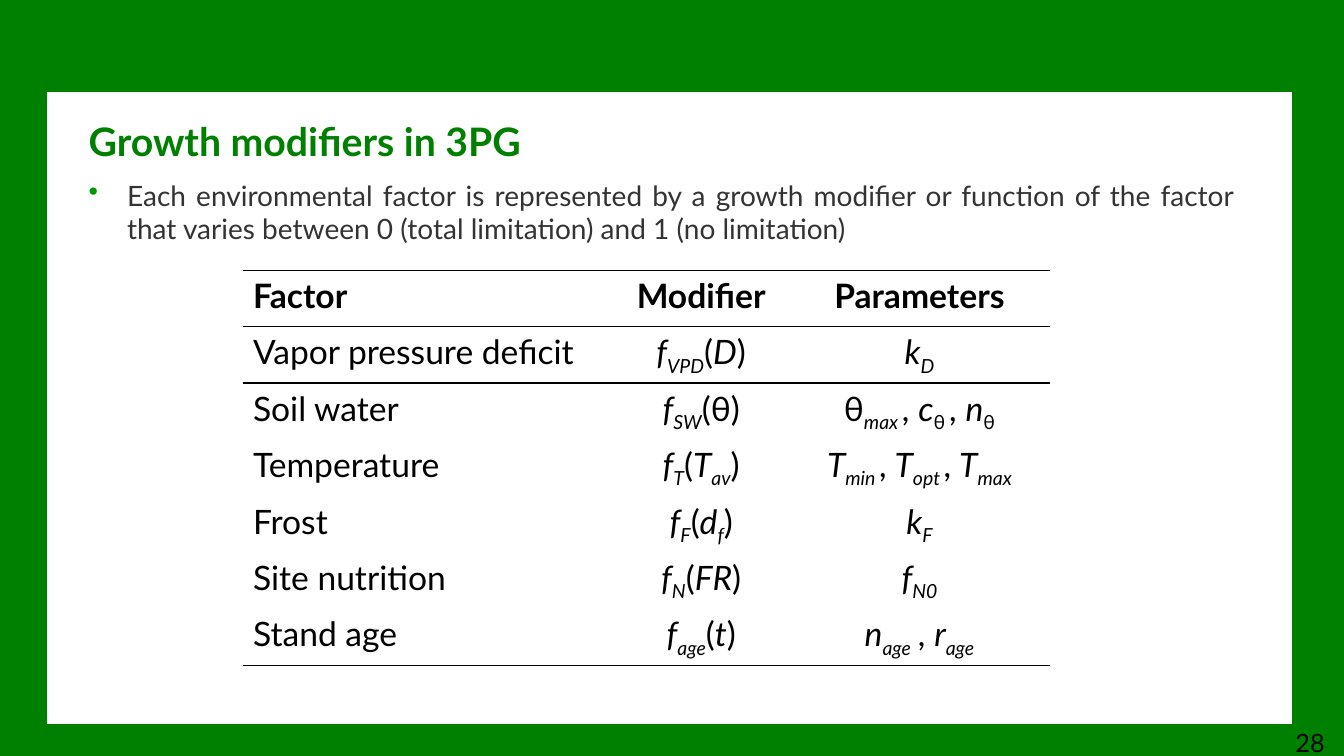
from pptx import Presentation
from pptx.dml.color import RGBColor
from pptx.enum.shapes import MSO_SHAPE
from pptx.enum.text import PP_ALIGN
from pptx.oxml import parse_xml
from pptx.oxml.ns import nsdecls
from pptx.util import Inches, Pt

COLORS = {
    "green": "008000",
    "bullet": "009900",
    "white": "FFFFFF",
    "body": "333333",
    "black": "000000",
}
FONT = "Lato"
NO_GRID_STYLE = "{2D5ABB26-0587-4C30-8999-92F81FD0307C}"
COLUMN_WIDTHS = [3.67, 1.75, 2.58]
ROW_HEIGHT = 0.56
HEADINGS = ["Factor", "Modifier", "Parameters"]

# Runs are split by "|": "*" is italic, "_" italic subscript, "~" upright subscript.
FACTORS = [
    ("Vapor pressure deficit", "*f|_VPD|(|*D|)", "*k|_D"),
    ("Soil water", "*f|_SW|(θ)", "θ|_max |*, c|~θ |*, n|~θ"),
    ("Temperature", "*f|_T|(|*T|_av|)", "*T|_min |*, T|_opt |*, T|_max"),
    ("Frost", "*f|_F|(|*d|_f|)", "*k|_F"),
    ("Site nutrition", "*f|_N|(|*FR|)", "*f|_N0"),
    ("Stand age", "*f|_age|(|*t|)", "*n|_age|* , r|_age"),
]


def color(name):
    return RGBColor.from_string(COLORS[name])


def add_run(paragraph, text, size, color_name, bold=False, italic=False):
    run = paragraph.add_run()
    run.text = text
    run.font.name = FONT
    run.font.size = Pt(size)
    run.font.color.rgb = color(color_name)
    run.font.bold = bold
    run.font.italic = italic
    return run


def add_formula(paragraph, formula, bold):
    for token in formula.split("|"):
        mark = token[0]
        text = token[1:] if mark in "*_~" else token
        run = add_run(paragraph, text, 24, "black", bold, mark in "*_")
        if mark in "_~":
            run.font._element.set("baseline", "-25000")


def add_panel(slide, left, top, width, height):
    panel = slide.shapes.add_shape(
        MSO_SHAPE.RECTANGLE, Inches(left), Inches(top), Inches(width), Inches(height)
    )
    panel.shadow.inherit = False
    panel.fill.solid()
    panel.fill.fore_color.rgb = color("white")
    panel.line.color.rgb = color("white")
    panel.line.width = Pt(0.75)


def add_text_box(slide, left, top, width, height):
    box = slide.shapes.add_textbox(
        Inches(left), Inches(top), Inches(width), Inches(height)
    )
    box.text_frame.word_wrap = True
    return box.text_frame


def add_introduction(slide, left, top, width, height):
    frame = add_text_box(slide, left, top, width, height)
    frame.margin_left, frame.margin_top = Inches(0.39), Inches(0.24)
    frame.margin_right, frame.margin_bottom = Inches(0.59), Inches(0.05)

    title = frame.paragraphs[0]
    title.alignment = PP_ALIGN.JUSTIFY
    add_run(title, "Growth modifiers in 3PG", 28, "green", bold=True)

    point = frame.add_paragraph()
    properties = point._p.get_or_add_pPr()
    properties.set("marL", str(Inches(0.38)))
    properties.set("indent", str(-Inches(0.38)))
    properties.append(parse_xml(
        f'<a:buClr {nsdecls("a")}><a:srgbClr val="{COLORS["bullet"]}"/></a:buClr>'
    ))
    properties.append(parse_xml(f'<a:buChar {nsdecls("a")} char="•"/>'))
    point.alignment = PP_ALIGN.JUSTIFY
    point.space_before = Pt(10)
    add_run(
        point,
        "Each environmental factor is represented by a growth modifier or function "
        "of the factor that varies between 0 (total limitation) and 1 (no limitation)",
        20,
        "body",
    )


def add_page_number(slide, left, top, width, height):
    frame = add_text_box(slide, left, top, width, height)
    add_run(frame.paragraphs[0], "28", 18, "black")


def set_borders(cell, edges):
    properties = cell._tc.get_or_add_tcPr()
    for position, edge in enumerate(edges):
        properties.insert(position, parse_xml(
            f'<a:ln{edge} {nsdecls("a")} w="{Pt(1)}"><a:solidFill>'
            f'<a:srgbClr val="{COLORS["black"]}"/></a:solidFill></a:ln{edge}>'
        ))


def add_factor_table(slide, left, top):
    rows = [HEADINGS, *FACTORS]
    last = len(rows) - 1
    frame = slide.shapes.add_table(
        len(rows), len(HEADINGS), Inches(left), Inches(top),
        Inches(sum(COLUMN_WIDTHS)), Inches(ROW_HEIGHT * len(rows)),
    )
    table = frame.table
    table.horz_banding = False
    frame.element.xpath(".//a:tableStyleId")[0].text = NO_GRID_STYLE
    for column, width in zip(table.columns, COLUMN_WIDTHS):
        column.width = Inches(width)
    edges = {0: "TB", 1: "T", last: "B"}
    for row_index, row in enumerate(rows):
        table.rows[row_index].height = Inches(ROW_HEIGHT)
        for column_index, formula in enumerate(row):
            cell = table.cell(row_index, column_index)
            cell.fill.background()
            set_borders(cell, edges.get(row_index, ""))
            paragraph = cell.text_frame.paragraphs[0]
            paragraph.alignment = PP_ALIGN.CENTER if column_index else PP_ALIGN.LEFT
            add_formula(paragraph, formula, bold=row_index == 0)


def main():
    presentation = Presentation()
    presentation.slide_width = Inches(13.33)
    presentation.slide_height = Inches(7.5)
    slide = presentation.slides.add_slide(presentation.slide_layouts[6])
    slide.background.fill.solid()
    slide.background.fill.fore_color.rgb = color("green")
    add_panel(slide, 0.47, 0.92, 12.34, 6.26)
    add_introduction(slide, 0.49, 0.92, 12.34, 6.21)
    add_page_number(slide, 12.75, 7.17, 0.58, 0.25)
    add_factor_table(slide, 2.41, 2.68)
    presentation.save("out.pptx")


if __name__ == "__main__":
    main()
